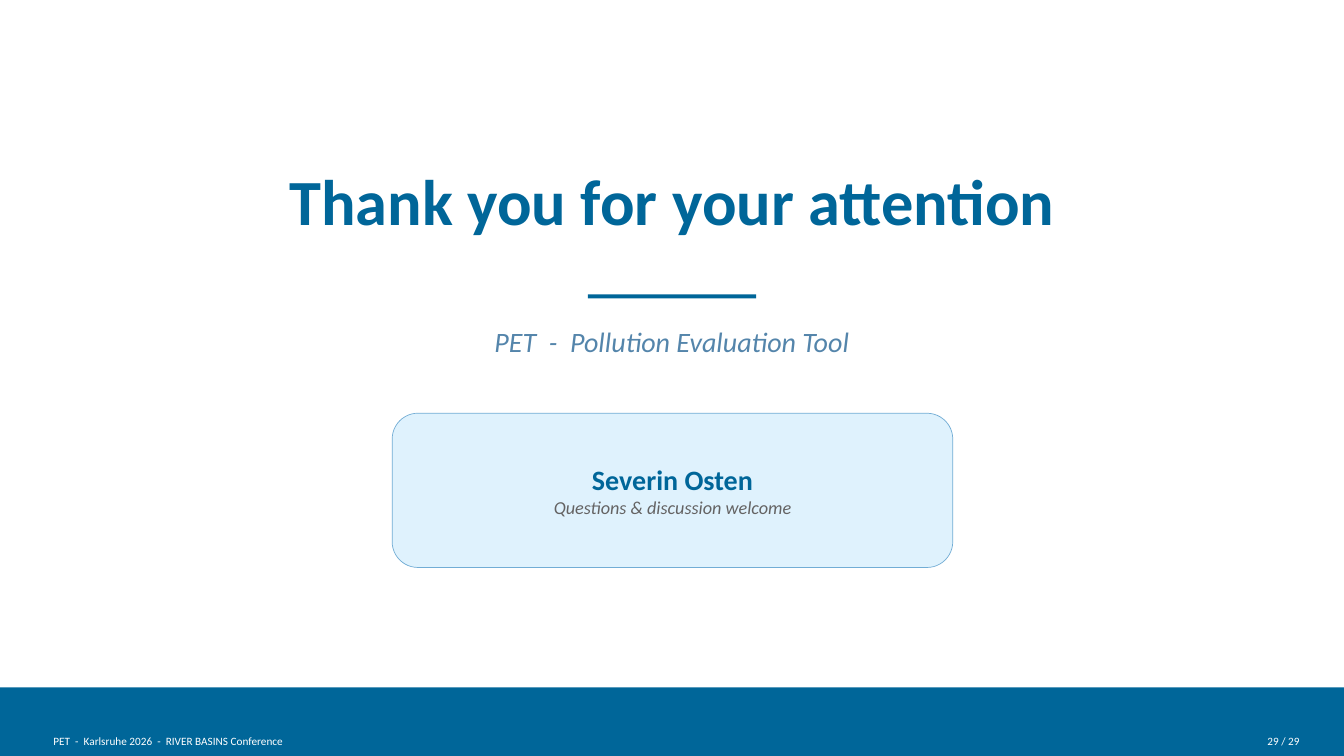
"""Build the closing thank-you slide of the PET talk."""
from pptx import Presentation
from pptx.dml.color import RGBColor
from pptx.enum.shapes import MSO_SHAPE
from pptx.enum.text import MSO_ANCHOR, MSO_AUTO_SIZE, PP_ALIGN
from pptx.util import Inches, Pt

COLORS = {
    "blue": "006699",
    "soft": "5485AB",
    "pale": "DFF2FD",
    "edge": "72ADD5",
    "gray": "646363",
    "white": "FFFFFF",
}


def color(name):
    return RGBColor.from_string(COLORS[name])


def write(para, text, size, ink, bold=False, italic=False, align=PP_ALIGN.CENTER):
    para.alignment = align
    span = para.add_run()
    span.text = text
    span.font.name = "Calibri"
    span.font.size = Pt(size)
    span.font.bold = bold
    span.font.italic = italic
    span.font.color.rgb = color(ink)


deck = Presentation()
deck.slide_width, deck.slide_height = Inches(13.33), Inches(7.5)
page = deck.slides.add_slide(deck.slide_layouts[5])

panels = {}
for name, kind, fill, area in [
    ("footer", MSO_SHAPE.RECTANGLE, "blue", (0, 6.82, 13.33, 0.68)),
    ("rule", MSO_SHAPE.RECTANGLE, "blue", (5.83, 2.92, 1.67, 0.04)),
    ("card", MSO_SHAPE.ROUNDED_RECTANGLE, "pale", (3.89, 4.1, 5.56, 1.53)),
]:
    panel = page.shapes.add_shape(kind, *map(Inches, area))
    panel.shadow.inherit = False
    panel.fill.solid()
    panel.fill.fore_color.rgb = color(fill)
    panel.line.fill.background()
    panels[name] = panel

card = panels["card"]
card.line.color.rgb = color("edge")
card.line.width = Pt(0.5)
card_frame = card.text_frame
card_frame.vertical_anchor = MSO_ANCHOR.MIDDLE
card_frame.margin_left = card_frame.margin_right = Inches(0.25)
card_frame.margin_top = card_frame.margin_bottom = Inches(0.19)
write(card_frame.paragraphs[0], "Severin Osten", size=20, ink="blue", bold=True)
write(card_frame.add_paragraph(), "Questions & discussion welcome", size=13, ink="gray", italic=True)

title = page.shapes.title
title.left, title.top, title.width, title.height = map(Inches, (0.5, 1.57, 12.33, 0.83))
subtitle, event, number = [
    page.shapes.add_textbox(*map(Inches, area))
    for area in [(0.5, 3.19, 12.33, 0.39), (0.5, 7.25, 6.94, 0.19), (11.81, 7.25, 1.11, 0.19)]
]

for box, text, style in [
    (title, "Thank you for your attention", dict(size=46, ink="blue", bold=True)),
    (subtitle, "PET  -  Pollution Evaluation Tool", dict(size=20, ink="soft", italic=True)),
    (event, "PET  -  Karlsruhe 2026  -  RIVER BASINS Conference",
     dict(size=8, ink="white", align=PP_ALIGN.LEFT)),
    (number, "29 / 29", dict(size=8, ink="white", align=PP_ALIGN.RIGHT)),
]:
    frame = box.text_frame
    frame.word_wrap = True
    frame.auto_size = MSO_AUTO_SIZE.SHAPE_TO_FIT_TEXT
    frame.vertical_anchor = MSO_ANCHOR.MIDDLE if box is title else MSO_ANCHOR.TOP
    frame.margin_left = frame.margin_right = Inches(0.03)
    frame.margin_top = frame.margin_bottom = Inches(0.03)
    write(frame.paragraphs[0], text, **style)

deck.save("out.pptx")
